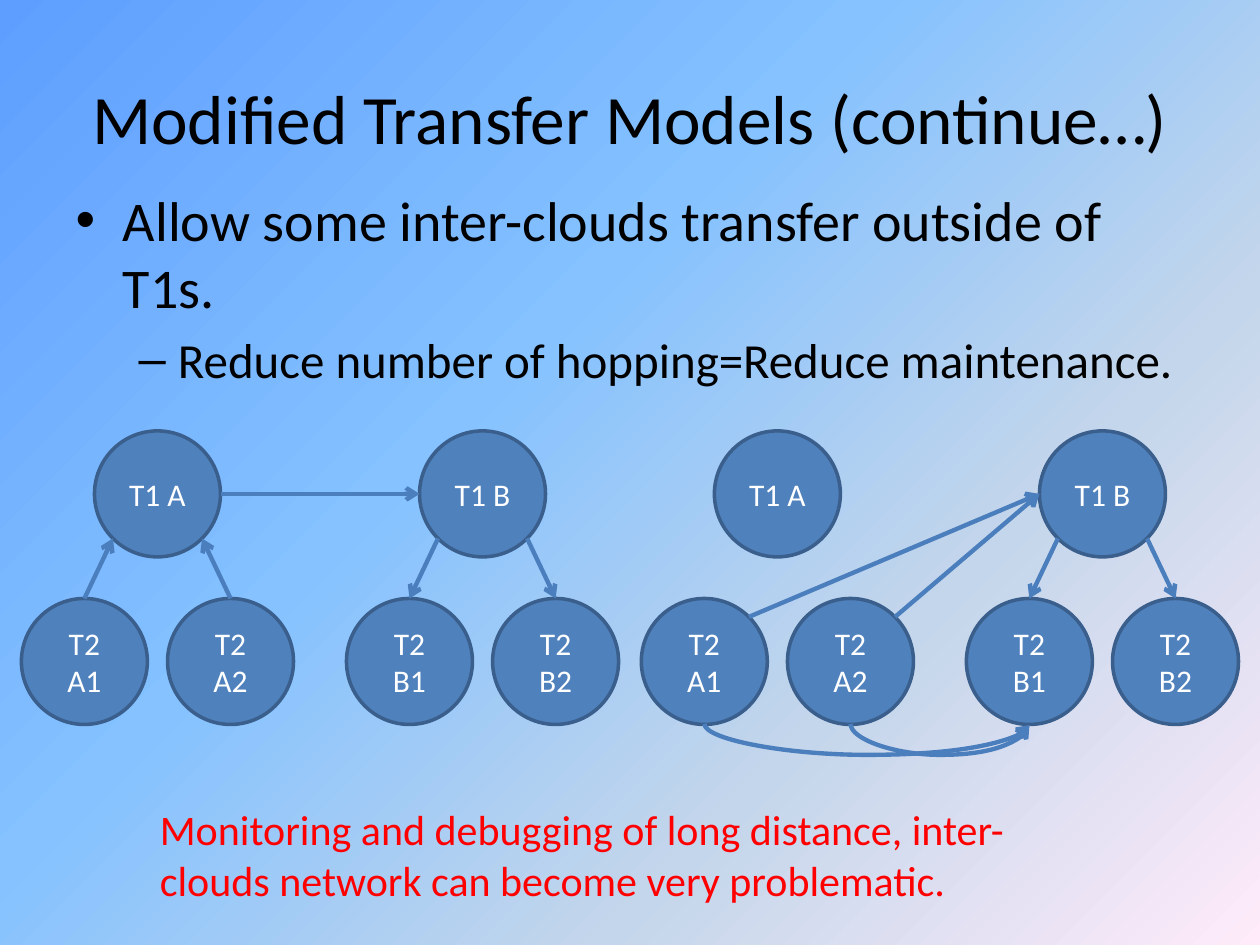
from dataclasses import dataclass
from math import cos, radians, sin

from lxml.etree import SubElement
from pptx import Presentation
from pptx.dml.color import RGBColor
from pptx.enum.shapes import MSO_CONNECTOR, MSO_SHAPE
from pptx.enum.text import MSO_ANCHOR, MSO_AUTO_SIZE, PP_ALIGN
from pptx.oxml.ns import qn
from pptx.util import Inches, Pt

BLACK = RGBColor(0x00, 0x00, 0x00)
WHITE = RGBColor(0xFF, 0xFF, 0xFF)
RED = RGBColor(0xFF, 0x00, 0x00)
NODE_FILL = RGBColor(0x4F, 0x81, 0xBD)
NODE_LINE = RGBColor(0x3A, 0x5F, 0x8C)
ARROW_LINE = RGBColor(0x4B, 0x7E, 0xBC)
BACKGROUND_STOPS = {
    0: RGBColor(0x5E, 0x9E, 0xFF),
    40: RGBColor(0x85, 0xC2, 0xFF),
    70: RGBColor(0xC4, 0xD6, 0xEB),
    100: RGBColor(0xFF, 0xEB, 0xFA),
}

DIAMETER = 1
TIER_ONE_TOP = 3.42
TIER_TWO_TOP = 4.75
CHILD_OFFSET = 0.58
CURVE_DEPTH = 0.25
CURVE_THICKNESS = 0.01
RIGHT, LOWER_RIGHT, BOTTOM, LOWER_LEFT, LEFT, TOP, UPPER_RIGHT = 0, 45, 90, 135, 180, 270, 315


@dataclass(frozen=True)
class Node:
    label: str
    left: float
    top: float

    def site(self, angle: int) -> tuple[float, float]:
        radius = DIAMETER / 2
        return (self.left + radius + radius * cos(radians(angle)),
                self.top + radius + radius * sin(radians(angle)))


@dataclass(frozen=True)
class Cloud:
    name: str
    left: float

    @property
    def root(self) -> Node:
        return Node(f"T1 {self.name}", self.left, TIER_ONE_TOP)

    @property
    def children(self) -> list[Node]:
        return [Node(f"T2 {self.name}{number}", self.left + side * CHILD_OFFSET, TIER_TWO_TOP)
                for number, side in ((1, -1), (2, 1))]


@dataclass(frozen=True)
class Arrow:
    start: Node
    start_angle: int
    end: Node
    end_angle: int


def format_font(font, size: float, color: RGBColor) -> None:
    for name, value in {"name": "Calibri", "size": Pt(size)}.items():
        setattr(font, name, value)
    font.color.rgb = color


def place(shape, left: float, top: float, width: float, height: float) -> None:
    bounds = {"left": left, "top": top, "width": width, "height": height}
    for name, value in bounds.items():
        setattr(shape, name, Inches(value))


def paint_background(slide) -> None:
    fill = slide.background.fill
    fill.gradient()
    gradient = slide.background._cSld.bg.bgPr.find(qn("a:gradFill"))
    for child in list(gradient):
        gradient.remove(child)
    stops = SubElement(gradient, qn("a:gsLst"))
    for position, color in BACKGROUND_STOPS.items():
        stop = SubElement(stops, qn("a:gs"), pos=str(position * 1000))
        SubElement(stop, qn("a:srgbClr"), val=str(color))
    SubElement(gradient, qn("a:lin"), ang=str(45 * 60000), scaled="0")


def draw_node(slide, node: Node) -> None:
    circle = slide.shapes.add_shape(MSO_SHAPE.OVAL, Inches(node.left), Inches(node.top),
                                    Inches(DIAMETER), Inches(DIAMETER))
    circle.shadow.inherit = False
    circle.fill.solid()
    circle.fill.fore_color.rgb = NODE_FILL
    circle.line.color.rgb = NODE_LINE
    circle.line.width = Pt(2)
    frame = circle.text_frame
    for name, value in {"word_wrap": True, "vertical_anchor": MSO_ANCHOR.MIDDLE}.items():
        setattr(frame, name, value)
    para = frame.paragraphs[0]
    para.text = node.label
    para.alignment = PP_ALIGN.CENTER
    format_font(para.font, 18, WHITE)


def draw_arrow(slide, arrow: Arrow, kind=MSO_CONNECTOR.STRAIGHT):
    points = (*arrow.start.site(arrow.start_angle), *arrow.end.site(arrow.end_angle))
    connector = slide.shapes.add_connector(kind, *(Inches(value) for value in points))
    connector.line.color.rgb = ARROW_LINE
    connector.line.width = Pt(2.5)
    SubElement(connector.line._get_or_add_ln(), qn("a:tailEnd"), type="arrow")
    SubElement(connector._element.spPr, qn("a:effectLst"))
    return connector


def draw_curve(slide, start: Node, end: Node) -> None:
    connector = draw_arrow(slide, Arrow(start, BOTTOM, end, BOTTOM), MSO_CONNECTOR.CURVE)
    start_x, base = start.site(BOTTOM)
    end_x, _ = end.site(BOTTOM)
    span = end_x - start_x
    place(connector, (start_x + end_x - CURVE_THICKNESS) / 2, base - span / 2,
          CURVE_THICKNESS, span)
    properties = connector._element.spPr
    transform = properties.find(qn("a:xfrm"))
    for name, value in {"rot": str(270 * 60000), "flipH": "1"}.items():
        transform.set(name, value)
    geometry = properties.find(qn("a:prstGeom"))
    adjustments = geometry.find(qn("a:avLst"))
    if adjustments is None:
        adjustments = SubElement(geometry, qn("a:avLst"))
    ratio = round(CURVE_DEPTH / CURVE_THICKNESS * 100000)
    SubElement(adjustments, qn("a:gd"), name="adj1", fmla=f"val {ratio}")


def downward_arrows(cloud: Cloud) -> list[Arrow]:
    return [Arrow(cloud.root, angle, child, TOP)
            for angle, child in zip((LOWER_LEFT, LOWER_RIGHT), cloud.children)]


def write_text(slide) -> None:
    title = slide.shapes.title
    place(title, 0.5, 0.3, 9, 1.25)
    title.text_frame.auto_size = MSO_AUTO_SIZE.NONE
    title.text_frame.vertical_anchor = MSO_ANCHOR.MIDDLE
    title.text_frame.text = "Modified Transfer Models (continue…)"
    format_font(title.text_frame.paragraphs[0].font, 39.6, BLACK)

    body = slide.placeholders[1]
    place(body, 0.5, 1.42, 9, 4.95)
    frame = body.text_frame
    frame.auto_size = MSO_AUTO_SIZE.NONE
    frame.text = ("Allow some inter-clouds transfer outside of T1s.\n"
                  "Reduce number of hopping=Reduce maintenance.")
    for level, (para, size) in enumerate(zip(frame.paragraphs, (32, 28))):
        para.level = level
        format_font(para.font, size, BLACK)

    box = slide.shapes.add_textbox(Inches(1.17), Inches(6.33), Inches(7.58), Inches(0.91))
    box.text_frame.word_wrap = True
    para = box.text_frame.paragraphs[0]
    para.text = ("Monitoring and debugging of long distance, "
                 "inter-clouds network can become very problematic.")
    format_font(para.font, 24, RED)


def main() -> None:
    deck = Presentation()
    deck.slide_width, deck.slide_height = Inches(10), Inches(7.5)
    slide = deck.slides.add_slide(deck.slide_layouts[1])
    paint_background(slide)
    write_text(slide)

    source, target = Cloud("A", 0.75), Cloud("B", 3.33)
    direct_source, direct_target = Cloud("A", 5.67), Cloud("B", 8.25)
    for cloud in (source, target, direct_source, direct_target):
        for node in (cloud.root, *cloud.children):
            draw_node(slide, node)

    upward = [Arrow(child, TOP, source.root, angle)
              for angle, child in zip((LOWER_LEFT, LOWER_RIGHT), source.children)]
    across = [Arrow(source.root, RIGHT, target.root, LEFT)]
    direct = [Arrow(child, UPPER_RIGHT, direct_target.root, LEFT)
              for child in direct_source.children]
    for arrow in (*upward, *across, *downward_arrows(target),
                  *downward_arrows(direct_target), *direct):
        draw_arrow(slide, arrow)
    for child in reversed(direct_source.children):
        draw_curve(slide, child, direct_target.children[0])

    deck.save("out.pptx")


if __name__ == "__main__":
    main()
